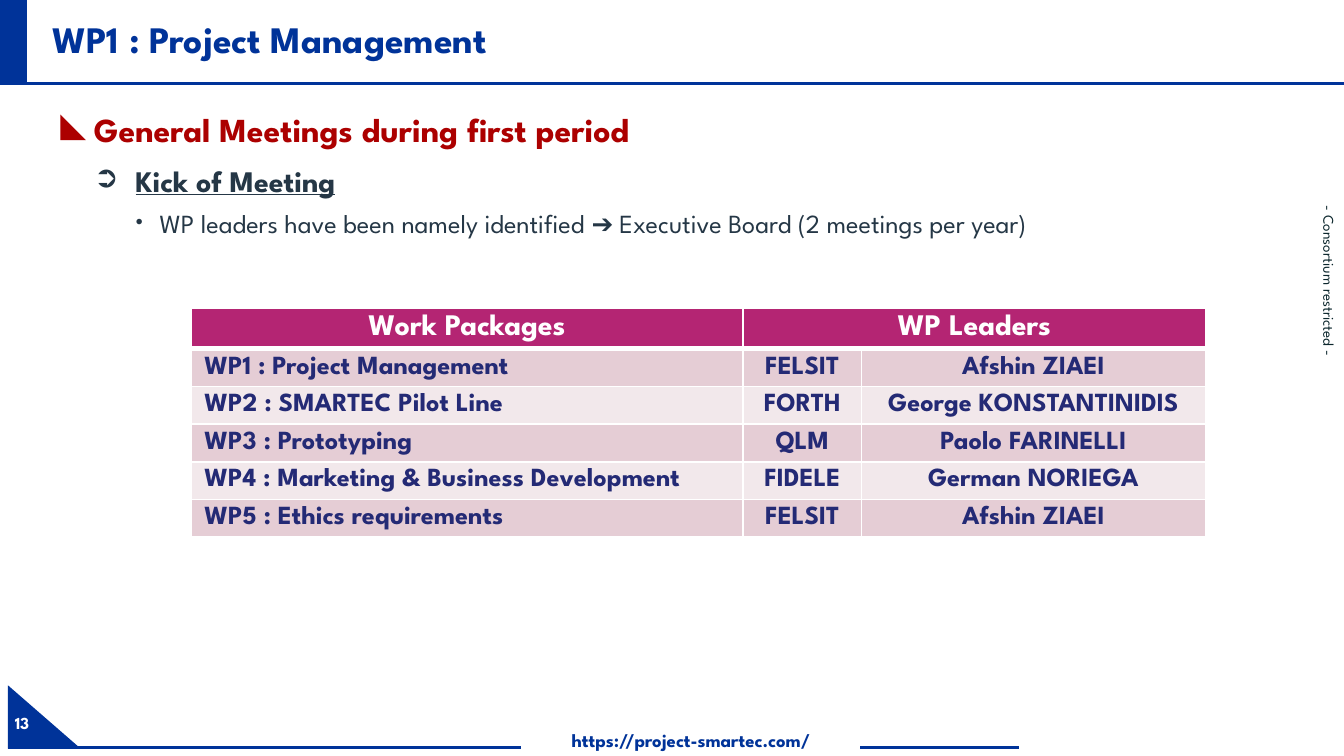
from lxml.etree import SubElement
from pptx import Presentation
from pptx.dml.color import RGBColor
from pptx.enum.shapes import MSO_CONNECTOR, MSO_SHAPE
from pptx.enum.text import MSO_ANCHOR, PP_ALIGN
from pptx.oxml.ns import qn
from pptx.util import Inches, Pt

FONT = "League Spartan"
COLORS = {
    "blue": "003399",
    "red": "AC0000",
    "slate": "253746",
    "ink": "0C272D",
    "navy": "242A75",
    "magenta": "B42573",
    "rose": "E5CDD5",
    "blush": "F2E8EB",
    "white": "FFFFFF",
}
WORK_PACKAGES = [
    ("WP1 : Project Management", "FELSIT", "Afshin ZIAEI"),
    ("WP2 : SMARTEC Pilot Line", "FORTH", "George KONSTANTINIDIS"),
    ("WP3 : Prototyping", "QLM", "Paolo FARINELLI"),
    ("WP4 : Marketing & Business Development", "FIDELE", "German NORIEGA"),
    ("WP5 : Ethics requirements", "FELSIT", "Afshin ZIAEI"),
]
OUTLINE = [
    dict(text="General Meetings during first period", bullet="◣", margin=0.4, hanging=0.25,
         before=0, after=5.2, size=18, color="red", bold=True),
    dict(text="Kick of Meeting", bullet="➲", margin=0.71, hanging=0.31,
         before=2.2, after=4.5, size=16, color="slate", bold=True, underline=True),
    dict(text="WP leaders have been namely identified ➔ Executive Board (2 meetings per year)",
         bullet="•", margin=0.89, hanging=0.2, before=0, after=1.5, size=14, color="slate"),
]


def rgb(name):
    """Return the named colour."""
    return RGBColor.from_string(COLORS[name])


class SlideBuilder:
    """Holds the font and the current slide, and adds elements to it."""

    def __init__(self, slide, font):
        self.slide = slide
        self.font = font

    def style(self, paragraph, size, color, bold=False, underline=False):
        """Set the font of a paragraph."""
        font = paragraph.font
        font.name, font.size, font.bold = self.font, Pt(size), bold
        font.underline = underline
        font.color.rgb = rgb(color)

    def shape(self, kind, left, top, width, height, color):
        """Add a filled shape without outline."""
        shape = self.slide.shapes.add_shape(
            kind, Inches(left), Inches(top), Inches(width), Inches(height))
        shape.shadow.inherit = False
        shape.fill.solid()
        shape.fill.fore_color.rgb = rgb(color)
        shape.line.fill.background()

    def line(self, start, end, color="blue", width=1.5):
        """Add a straight line between two points."""
        line = self.slide.shapes.add_connector(
            MSO_CONNECTOR.STRAIGHT, *(Inches(value) for value in (*start, *end)))
        line.line.color.rgb = rgb(color)
        line.line.width = Pt(width)
        SubElement(line._element.spPr, qn("a:effectLst"))
        return line

    def frame(self, left, top, width, height, insets=(0.1, 0.05), anchor=MSO_ANCHOR.TOP):
        """Add an empty wrapping text box."""
        box = self.slide.shapes.add_textbox(
            Inches(left), Inches(top), Inches(width), Inches(height))
        frame = box.text_frame
        frame.word_wrap = True
        frame.vertical_anchor = anchor
        frame.margin_left = frame.margin_right = Inches(insets[0])
        frame.margin_top = frame.margin_bottom = Inches(insets[1])
        return box

    def label(self, text, area, size, color, bold=True, align=PP_ALIGN.LEFT, vertical=False, **frame):
        """Add a text box with one paragraph."""
        box = self.frame(*area, **frame)
        paragraph = box.text_frame.paragraphs[0]
        paragraph.text = text
        paragraph.alignment = align
        self.style(paragraph, size, color, bold)
        if vertical:
            box.text_frame._txBody.bodyPr.set("vert", "eaVert")
        return box

    def outline(self, items, area):
        """Add a bulleted list with one paragraph per item."""
        frame = self.frame(*area).text_frame
        for index, item in enumerate(items):
            paragraph = frame.paragraphs[0] if index == 0 else frame.add_paragraph()
            paragraph.text = item["text"]
            paragraph.level = index
            paragraph.space_before = Pt(item["before"])
            paragraph.space_after = Pt(item["after"])
            properties = paragraph._p.get_or_add_pPr()
            properties.set("marL", str(Inches(item["margin"])))
            properties.set("indent", str(-Inches(item["hanging"])))
            bullet_color = SubElement(properties, qn("a:buClr"))
            SubElement(bullet_color, qn("a:srgbClr"), val=COLORS[item["color"]])
            SubElement(properties, qn("a:buFont"), typeface=self.font)
            SubElement(properties, qn("a:buChar"), char=item["bullet"])
            self.style(paragraph, item["size"], item["color"],
                       item.get("bold", False), item.get("underline", False))

    def cell(self, cell, text, fill, size, color, align, top=1, bottom=1):
        """Fill, border and write one table cell."""
        properties = cell._tc.get_or_add_tcPr()
        for side, width in (("L", 1), ("R", 1), ("T", top), ("B", bottom)):
            border = SubElement(properties, qn(f"a:ln{side}"), w=str(Pt(width)))
            solid = SubElement(border, qn("a:solidFill"))
            SubElement(solid, qn("a:srgbClr"), val=COLORS["white"])
        cell.fill.solid()
        cell.fill.fore_color.rgb = rgb(fill)
        cell.vertical_anchor = MSO_ANCHOR.MIDDLE
        cell.margin_top = cell.margin_bottom = Inches(0.02)
        paragraph = cell.text_frame.paragraphs[0]
        paragraph.text = text
        paragraph.alignment = align
        self.style(paragraph, size, color, bold=True)

    def leaders_table(self, packages, left, top, widths, header_height, row_height):
        """Add the table of work packages and their leaders."""
        height = header_height + row_height * len(packages)
        table = self.slide.shapes.add_table(
            len(packages) + 1, len(widths), Inches(left), Inches(top),
            Inches(sum(widths)), Inches(height)).table
        for column, width in zip(table.columns, widths):
            column.width = Inches(width)
        for index, row in enumerate(table.rows):
            row.height = Inches(row_height if index else header_height)
        table.cell(0, 1).merge(table.cell(0, 2))
        for column, heading in enumerate(("Work Packages", "WP Leaders", "")):
            self.cell(table.cell(0, column), heading, "magenta", 16, "white",
                      PP_ALIGN.CENTER, bottom=3)
        for row, package in enumerate(packages, start=1):
            for column, text in enumerate(package):
                self.cell(table.cell(row, column), text, "rose" if row % 2 else "blush",
                          14, "navy", PP_ALIGN.CENTER if column else PP_ALIGN.LEFT,
                          top=3 if row == 1 else 1)


def main():
    """Build and save the slide."""
    presentation = Presentation()
    presentation.slide_width, presentation.slide_height = Inches(10), Inches(10 * 9 / 16)
    slide = presentation.slides.add_slide(presentation.slide_layouts[6])
    builder = SlideBuilder(slide, FONT)

    builder.shape(MSO_SHAPE.RIGHT_TRIANGLE, 0.06, 5.1, 0.54, 0.47, "blue")
    builder.label("13", (0.04, 5.23, 0.43, 0.3), 9, "white",
                  insets=(0.07, 0.04), anchor=MSO_ANCHOR.MIDDLE)
    builder.line((-0.01, 0.62), (10, 0.62))
    builder.shape(MSO_SHAPE.RECTANGLE, 0, -0.02, 0.2, 0.63, "blue")

    website = builder.label("https://project-smartec.com/", (3.88, 5.42, 2.52, 0.28), 10, "blue",
                            align=PP_ALIGN.CENTER, insets=(0.1, 0))
    builder.line((0.06, 5.56), (3.88, 5.56)).end_connect(website, 1)
    builder.line((6.4, 5.56), (7.58, 5.56)).begin_connect(website, 3)
    builder.label("- Consortium restricted -", (9.78, 1.53, 0.22, 2.65), 8, "ink", bold=False,
                  align=PP_ALIGN.CENTER, vertical=True, insets=(0, 0), anchor=MSO_ANCHOR.MIDDLE)

    title = builder.label("WP1 : Project Management", (0.29, 0, 9.49, 0.61), 20, "blue",
                          anchor=MSO_ANCHOR.MIDDLE)
    title.text_frame.paragraphs[0].line_spacing = 0.9
    builder.outline(OUTLINE, (0.2, 0.76, 9.58, 1.31))
    builder.leaders_table(WORK_PACKAGES, 1.42, 2.29, (4.11, 0.88, 2.56), 0.3, 0.28)
    presentation.save("out.pptx")


if __name__ == "__main__":
    main()
